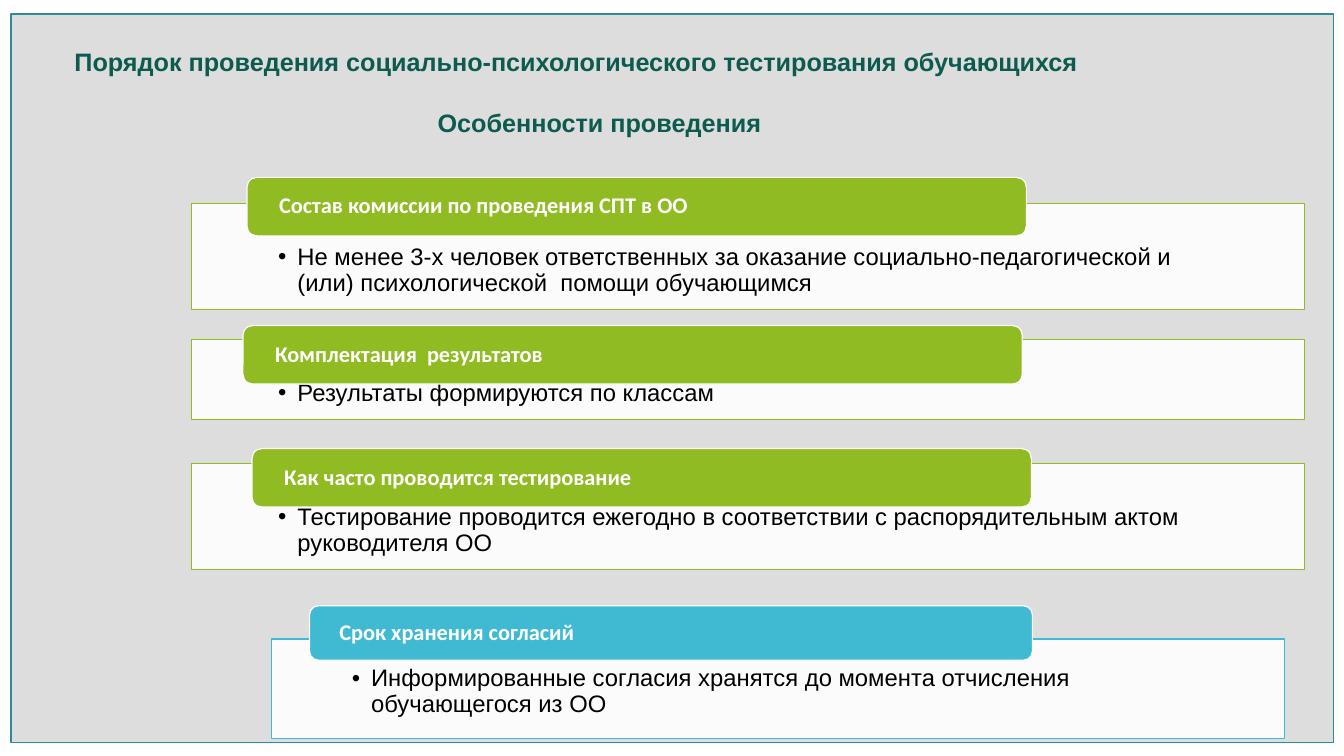
from pptx import Presentation
from pptx.dml.color import RGBColor
from pptx.enum.shapes import MSO_SHAPE as SHAPE
from pptx.enum.text import MSO_ANCHOR as ANCHOR, PP_ALIGN as ALIGN
from pptx.oxml.ns import qn
from pptx.util import Inches, Pt
from lxml.etree import SubElement

COLORS = {
    "panel": "DDDDDD", "panel_line": "2F8A9B", "title": "0D5A4F",
    "green": "90BB23", "blue": "40BAD2", "white": "FFFFFF", "black": "000000",
}
TITLE = "Порядок проведения социально-психологического тестирования обучающихся"
SUBTITLE = "Особенности проведения"

GREEN = {"color": "green", "left": 1.9, "width": 11.04, "pad": 0.86, "top_pad": 0.41,
         "head_size": (7.73, 0.58), "head_pad": 0.29}
BLUE = {"color": "blue", "left": 2.69, "width": 10.05, "pad": 0.8, "top_pad": 0.27,
        "head_size": (7.17, 0.54), "head_pad": 0.27}

SECTIONS = [
    (GREEN, 2.02, 1.05, (2.45, 1.76), "Состав комиссии по проведения СПТ в ОО",
     "Не менее 3-х человек ответственных за оказание социально-педагогической и "
     "(или) психологической  помощи обучающимся"),
    (GREEN, 3.37, 0.79, (2.41, 3.23), "Комплектация  результатов",
     "Результаты формируются по классам"),
    (GREEN, 4.6, 1.05, (2.5, 4.45), "Как часто проводится тестирование",
     "Тестирование проводится ежегодно в соответствии с распорядительным актом "
     "руководителя ОО"),
    (BLUE, 6.34, 0.99, (3.07, 6.01), "Срок хранения согласий",
     "Информированные согласия хранятся до момента отчисления обучающегося из ОО"),
]


def rgb(name):
    return RGBColor.from_string(COLORS[name])


def add_box(kind, left, top, width, height, fill, line):
    s = slide.shapes.add_shape(kind, Inches(left), Inches(top), Inches(width), Inches(height))
    s.shadow.inherit = False
    s.fill.solid()
    s.fill.fore_color.rgb = rgb(fill)
    s.line.color.rgb = rgb(line)
    s.line.width = Pt(0.85)
    return s


def set_frame(s, side, top, bottom, anchor):
    tf = s.text_frame
    tf.word_wrap = True
    tf.margin_left = tf.margin_right = Inches(side)
    tf.margin_top, tf.margin_bottom = Inches(top), Inches(bottom)
    tf.vertical_anchor = anchor
    p = tf.paragraphs[0]
    p.alignment = ALIGN.LEFT
    p.line_spacing = 0.9
    return p


def add_run(p, text, size, font, color, bold=False):
    r = p.add_run()
    r.text = text
    r.font.size, r.font.name, r.font.bold = Pt(size), font, bold
    r.font.color.rgb = rgb(color)


def add_bullet(p):
    pPr = p._p.get_or_add_pPr()
    pPr.set("marL", str(Inches(0.19)))
    pPr.set("indent", str(-Inches(0.19)))
    SubElement(pPr, qn("a:buFont"), typeface="Arial")
    SubElement(pPr, qn("a:buChar"), char="•")


def add_section(style, top, height, head_at, heading, body):
    s = add_box(SHAPE.RECTANGLE, style["left"], top, style["width"], height,
                "white", style["color"])
    fill = s._element.spPr.find(qn("a:solidFill"))
    SubElement(fill[0], qn("a:alpha"), val="90000")
    p = set_frame(s, style["pad"], style["top_pad"], 0.13, ANCHOR.TOP)
    add_bullet(p)
    add_run(p, body, 17, "Arial", "black")

    s = add_box(SHAPE.ROUNDED_RECTANGLE, *head_at, *style["head_size"],
                style["color"], "white")
    p = set_frame(s, style["head_pad"], 0, 0, ANCHOR.MIDDLE)
    add_run(p, heading, 16, "Calibri", "white", True)


prs = Presentation()
prs.slide_width, prs.slide_height = Inches(13.33), Inches(7.5)
slide = prs.slides.add_slide(prs.slide_layouts[6])

add_box(SHAPE.RECTANGLE, 0.11, 0.14, 13.12, 7.23, "panel", "panel_line")

title = slide.shapes.add_textbox(Inches(0.64), Inches(0.41), Inches(10.61), Inches(1.01))
tf = title.text_frame
tf.word_wrap = True
add_run(tf.paragraphs[0], TITLE, 18, "Arial", "title", True)
p = tf.add_paragraph()
p.alignment = ALIGN.CENTER
p.space_before = Pt(22)
add_run(p, SUBTITLE, 18, "Arial", "title", True)

for section in SECTIONS:
    add_section(*section)

prs.save("out.pptx")
